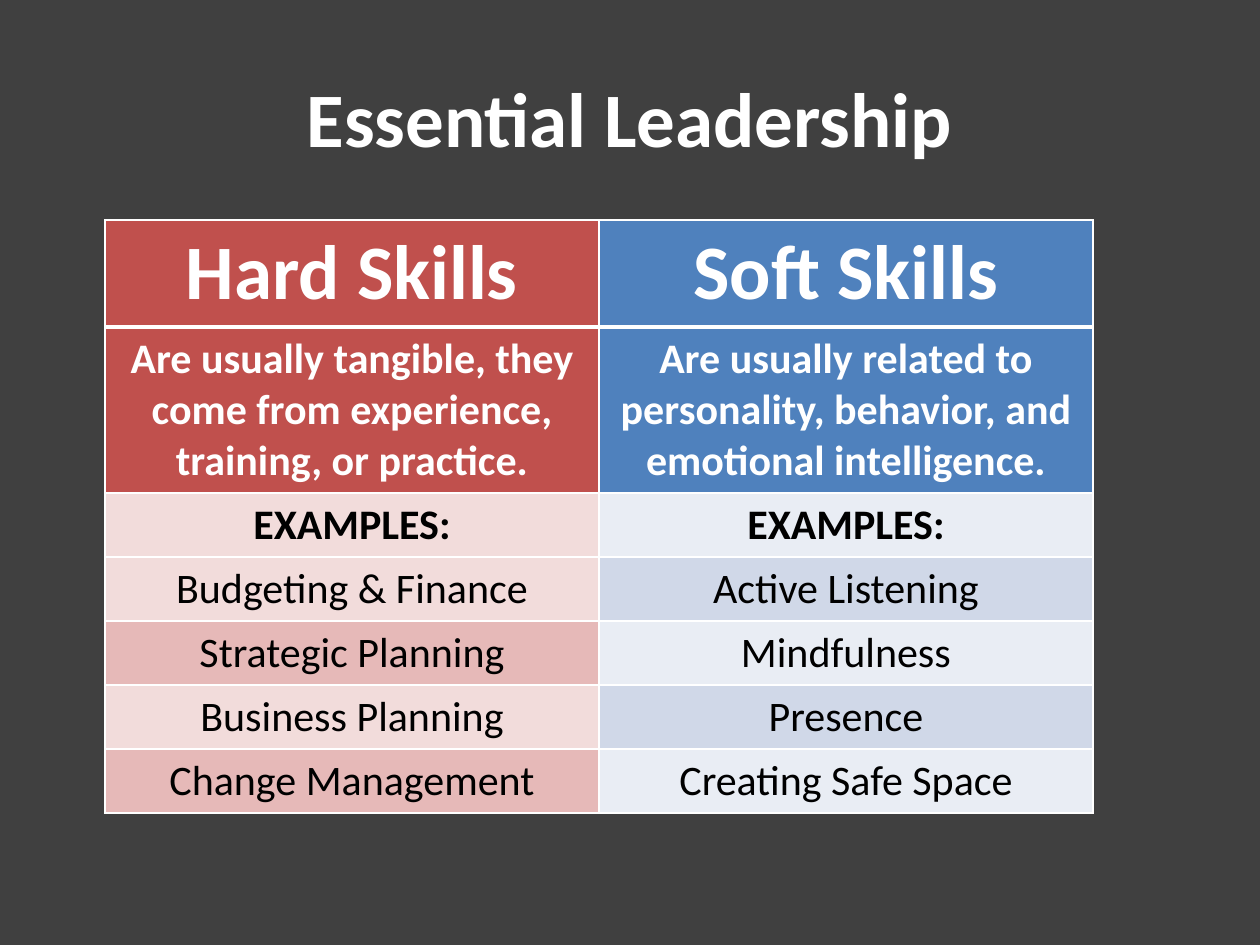
from lxml.etree import SubElement
from pptx import Presentation
from pptx.dml.color import RGBColor
from pptx.enum.text import MSO_ANCHOR as Anchor, PP_ALIGN as Align
from pptx.oxml.ns import qn
from pptx.util import Pt

FONT = "Calibri"
WHITE, BLACK, BACKGROUND = "FFFFFF", "000000", "404040"
TITLE = "Essential Leadership"

# Each skill type: name, description, examples
SKILLS = [
    ("Hard Skills",
     "Are usually tangible, they come from experience, training, or practice.",
     ["Budgeting & Finance", "Strategic Planning", "Business Planning", "Change Management"]),
    ("Soft Skills",
     "Are usually related to personality, behavior, and emotional intelligence.",
     ["Active Listening", "Mindfulness", "Presence", "Creating Safe Space"]),
]
# Row fills of each column, from the header down
FILLS = [
    ["C0504D"] * 2 + ["F2DCDB"] + ["F2DCDB", "E6B9B8"] * 2,
    ["4F81BD"] * 2 + ["E9EDF4"] + ["D0D8E8", "E9EDF4"] * 2,
]
ROW_HEIGHTS = [107, 166] + [64] * 5
COLUMN_WIDTH = 494
TABLE_LEFT, TABLE_TOP = 105, 220


def px(length):
    return round(length * 914400 / 126)


def color(code):
    return RGBColor.from_string(code)


def write(frame, text, size, ink, bold):
    paragraph = frame.paragraphs[0]
    paragraph.alignment = Align.CENTER
    run = paragraph.add_run()
    run.text = text
    font = run.font
    font.name, font.size, font.bold = FONT, Pt(size), bold
    font.color.rgb = color(ink)


def add_borders(cell, top, bottom):
    """Draw white cell edges; top and bottom are widths in points."""
    properties = cell._tc.get_or_add_tcPr()
    for edge, width in (("L", 1), ("R", 1), ("T", top), ("B", bottom)):
        line = SubElement(properties, qn(f"a:ln{edge}"), w=str(Pt(width)))
        SubElement(SubElement(line, qn("a:solidFill")), qn("a:srgbClr"), val=WHITE)


prs = Presentation()
prs.slide_width, prs.slide_height = px(1260), px(945)
slide = prs.slides.add_slide(prs.slide_layouts[6])
slide.background.fill.solid()
slide.background.fill.fore_color.rgb = color(BACKGROUND)

title = slide.shapes.add_textbox(px(63), px(38), px(1134), px(157)).text_frame
title.word_wrap = True
title.vertical_anchor = Anchor.MIDDLE
write(title, TITLE, 44, WHITE, True)

table = slide.shapes.add_table(
    len(ROW_HEIGHTS), len(SKILLS), px(TABLE_LEFT), px(TABLE_TOP),
    px(COLUMN_WIDTH * len(SKILLS)), px(sum(ROW_HEIGHTS))).table
for row, height in zip(table.rows, ROW_HEIGHTS):
    row.height = px(height)

for c, (name, description, examples) in enumerate(SKILLS):
    table.columns[c].width = px(COLUMN_WIDTH)
    for r, text in enumerate([name, description, "EXAMPLES:", *examples]):
        cell = table.cell(r, c)
        add_borders(cell, top=3 if r == 1 else 1, bottom=3 if r == 0 else 1)
        cell.fill.solid()
        cell.fill.fore_color.rgb = color(FILLS[c][r])
        cell.vertical_anchor = Anchor.MIDDLE if r < 2 else Anchor.TOP
        write(cell.text_frame, text, size=44 if r == 0 else 24,
              ink=WHITE if r < 2 else BLACK, bold=r < 3)

prs.save("out.pptx")
